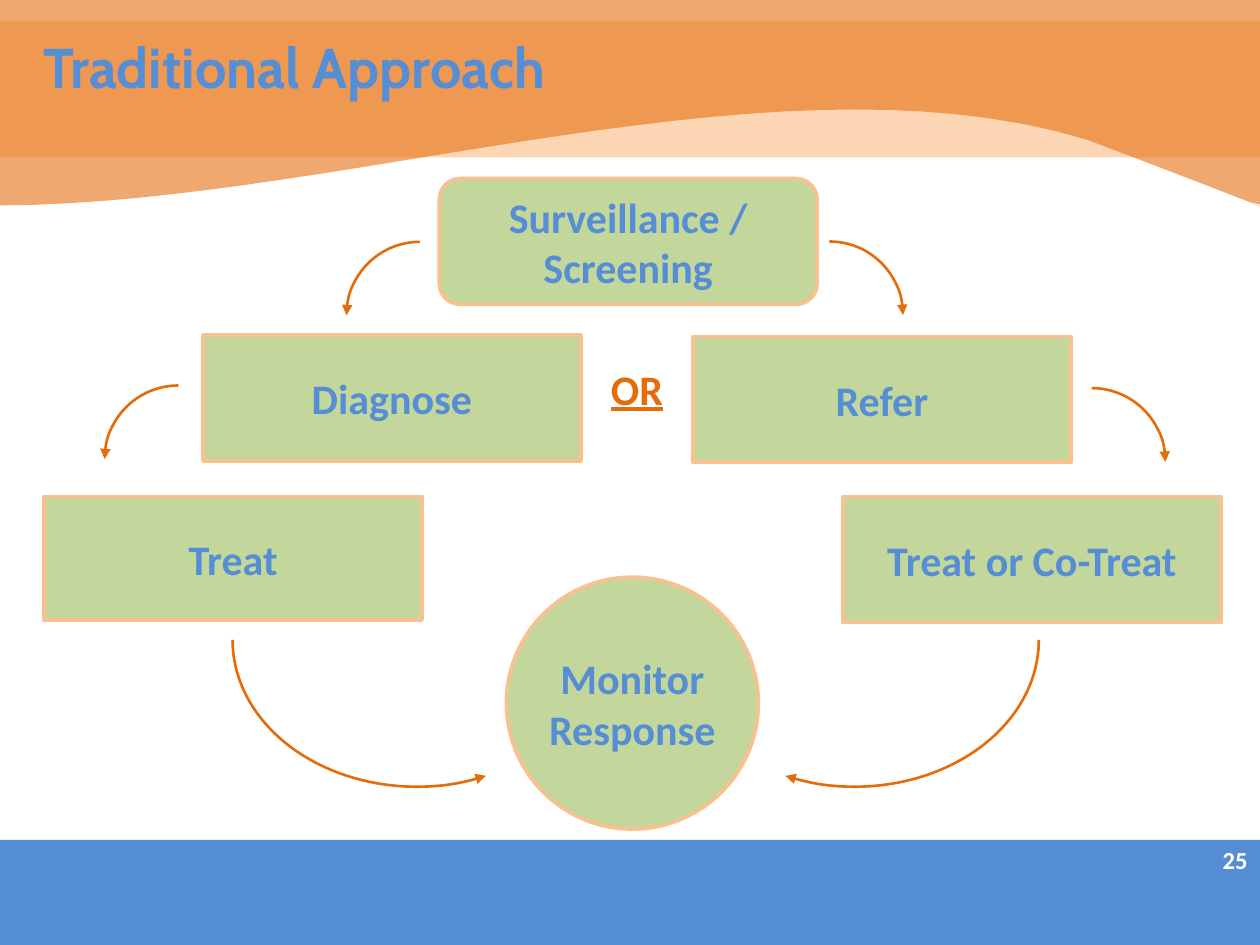
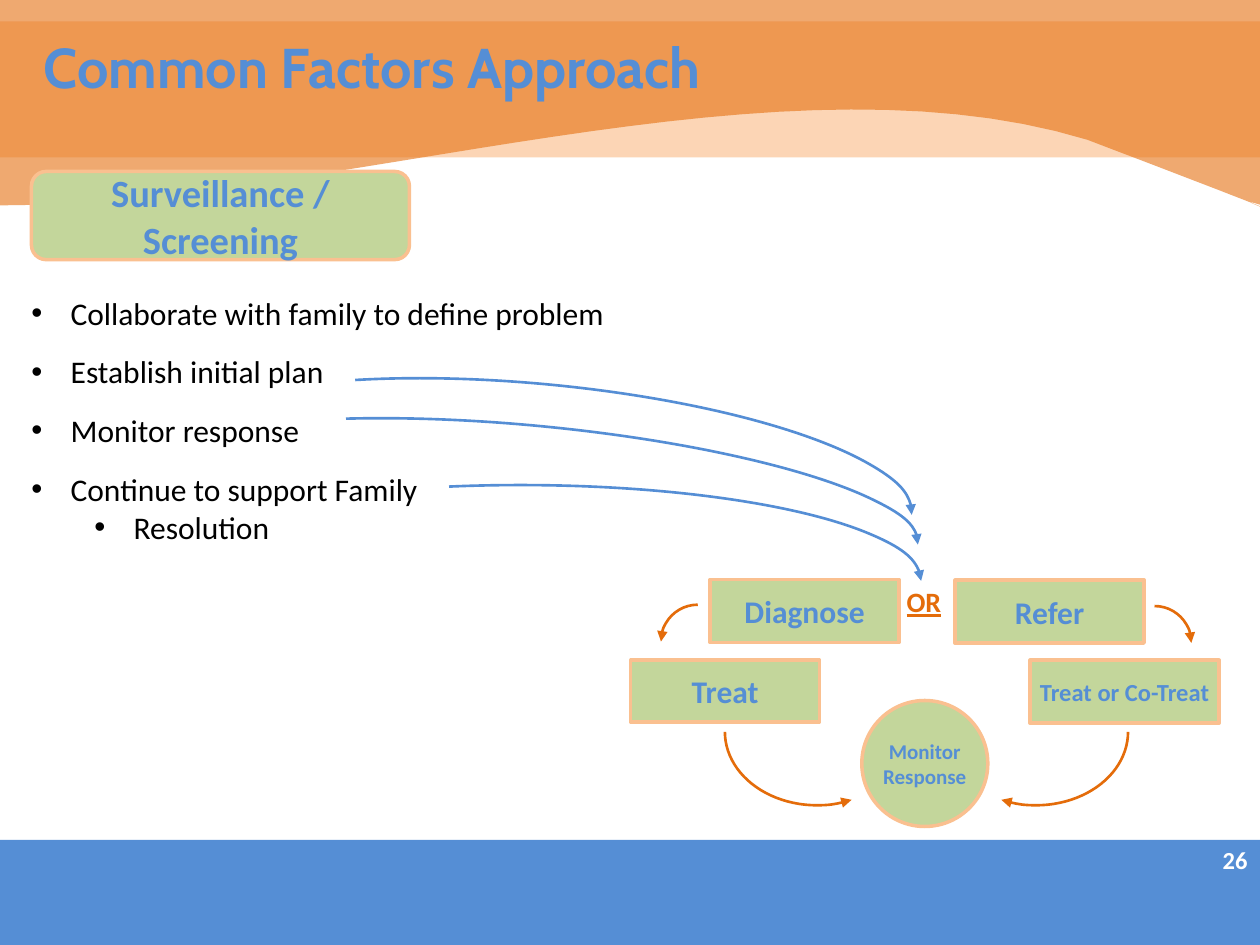
from lxml.etree import SubElement
from pptx import Presentation
from pptx.dml.color import RGBColor
from pptx.enum.shapes import MSO_SHAPE
from pptx.enum.text import MSO_ANCHOR, PP_ALIGN
from pptx.oxml.ns import qn
from pptx.util import Pt

BLUE = RGBColor(0x55, 0x8E, 0xD5)
ORANGE = RGBColor(0xE4, 0x6C, 0x0A)
PEACH = RGBColor(0xFC, 0xD5, 0xB5)
BORDER = RGBColor(0xFA, 0xC0, 0x90)
GREEN = RGBColor(0xC3, 0xD6, 0x9B)
WHITE = RGBColor(0xFF, 0xFF, 0xFF)
BLACK = RGBColor(0x00, 0x00, 0x00)

SLIDE_WIDTH, SLIDE_HEIGHT = 720, 540
WAVE_CURVES = [
    [(-2.2, 117.4), (194.4, 117.4), (442.1, 25.2), (621.4, 79.9)],
    [(621.4, 79.9), (799.2, 147.6), (686.9, 106.6), (721.4, 117.4)],
]
CURVE_STEPS = 30
SWEEP = (162, 16.24)
QUARTER = (162, 0)


def add_run(paragraph, text, size, color, bold=True, font="Calibri", underline=False):
    run = paragraph.add_run()
    run.text = text
    run.font.size = Pt(size)
    run.font.name = font
    run.font.bold = bold
    run.font.underline = underline
    run.font.color.rgb = color


def add_preset(slide, preset, place, fill=None):
    shape = slide.shapes.add_shape(preset, *map(Pt, place))
    shape.shadow.inherit = False
    if fill is None:
        shape.fill.background()
    else:
        shape.fill.solid()
        shape.fill.fore_color.rgb = fill
    return shape


def add_band(slide, place, color):
    add_preset(slide, MSO_SHAPE.RECTANGLE, place, color).line.fill.background()


def bezier_points(curve):
    for step in range(1, CURVE_STEPS + 1):
        t = step / CURVE_STEPS
        weights = ((1 - t) ** 3, 3 * t * (1 - t) ** 2, 3 * t * t * (1 - t), t ** 3)
        yield tuple(Pt(sum(w * point[axis] for w, point in zip(weights, curve)))
                    for axis in (0, 1))


def add_wave(slide):
    left, right = Pt(WAVE_CURVES[0][0][0]), Pt(WAVE_CURVES[1][-1][0])
    outline = slide.shapes.build_freeform(right, 0, scale=1.0)
    edge = [(left, 0), (left, Pt(WAVE_CURVES[0][0][1]))]
    for curve in WAVE_CURVES:
        edge.extend(bezier_points(curve))
    outline.add_line_segments(edge, close=True)
    wave = outline.convert_to_shape()
    wave.shadow.inherit = False
    wave.line.fill.background()
    wave.fill.solid()
    wave.fill.fore_color.rgb = ORANGE
    color = wave.element.spPr.find(qn("a:solidFill"))[0]
    SubElement(color, qn("a:alpha"), val="58000")


def add_text(slide, place, text, size, color, align=PP_ALIGN.LEFT,
             anchor=MSO_ANCHOR.TOP, **style):
    frame = slide.shapes.add_textbox(*map(Pt, place)).text_frame
    frame.word_wrap = True
    frame.vertical_anchor = anchor
    frame.paragraphs[0].alignment = align
    add_run(frame.paragraphs[0], text, size, color, **style)


def add_step(slide, preset, place, lines, size, side_inset=7.2):
    step = add_preset(slide, preset, place, GREEN)
    step.line.color.rgb = BORDER
    step.line.width = Pt(2)
    frame = step.text_frame
    frame.word_wrap = True
    frame.vertical_anchor = MSO_ANCHOR.MIDDLE
    frame.margin_left = frame.margin_right = Pt(side_inset)
    for index, line in enumerate(lines):
        paragraph = frame.add_paragraph() if index else frame.paragraphs[0]
        paragraph.alignment = PP_ALIGN.CENTER
        add_run(paragraph, line, size, BLUE)


def add_arc_arrow(slide, place, angles=QUARTER, color=ORANGE, rotation=0, flip=None):
    arc = add_preset(slide, MSO_SHAPE.ARC, place)
    arc.adjustments[0], arc.adjustments[1] = angles
    arc.rotation = rotation
    arc.line.color.rgb = color
    arc.line.width = Pt(1.5)
    if flip:
        arc.element.spPr.find(qn("a:xfrm")).set(flip, "1")
    SubElement(arc.element.spPr.find(qn("a:ln")), qn("a:tailEnd"), type="triangle")


def add_care_pathway(slide, origin, scale, box_size, co_treat_size, monitor_size):
    def fit(left, top, width, height):
        return (origin[0] + scale * left, origin[1] + scale * top,
                scale * width, scale * height)

    boxes = [
        ("Diagnose", (116, 191.5, 216, 72), box_size, 7.2),
        ("Refer", (396, 192.2, 216, 72), box_size, 7.2),
        ("Treat", (25.2, 283.7, 216, 70.6), box_size, 7.2),
        ("Treat or Co-Treat", (481.7, 283.7, 216, 72), co_treat_size, 0),
    ]
    for label, place, size, inset in boxes:
        add_step(slide, MSO_SHAPE.RECTANGLE, fit(*place), [label], size, inset)
    add_step(slide, MSO_SHAPE.OVAL, fit(289.4, 329.8, 144, 144),
             ["Monitor", "Response"], monitor_size, 0)
    add_arc_arrow(slide, fit(581.8, 221.8, 84.2, 84.2))
    add_arc_arrow(slide, fit(59.8, 220.3, 84.2, 84.2), flip="flipH")
    add_arc_arrow(slide, fit(404.6, 260.6, 167.8, 210.2), SWEEP, rotation=90)
    add_arc_arrow(slide, fit(154.1, 260.6, 167.8, 210.2), SWEEP, rotation=90, flip="flipV")


def add_bullets(slide, place, items):
    frame = slide.shapes.add_textbox(*map(Pt, place)).text_frame
    frame.word_wrap = True
    for index, (text, level, after) in enumerate(items):
        paragraph = frame.add_paragraph() if index else frame.paragraphs[0]
        paragraph.level = level
        paragraph.space_after = Pt(after)
        properties = paragraph._p.get_or_add_pPr()
        properties.set("marL", str(Pt(22.5 + 36 * level)))
        properties.set("indent", str(Pt(-22.5)))
        SubElement(properties, qn("a:buFont"), typeface="Arial")
        SubElement(properties, qn("a:buChar"), char="•")
        add_run(paragraph, text, 18, BLACK, bold=False)


def add_framed_slide(deck, title, number):
    slide = deck.slides.add_slide(deck.slide_layouts[6])
    add_band(slide, (-0.7, 12.2, 721.6, 77.8), PEACH)
    add_wave(slide)
    add_band(slide, (-0.7, 480, 727, 66), BLUE)
    add_text(slide, (18, 15.1, 628, 75), title, 32, BLUE, font="Cabin")
    add_text(slide, (552, 477, 168, 28.8), str(number), 14, WHITE,
             PP_ALIGN.RIGHT, MSO_ANCHOR.MIDDLE)
    return slide


def add_traditional_approach(deck):
    slide = add_framed_slide(deck, "Traditional Approach", 25)
    add_step(slide, MSO_SHAPE.ROUNDED_RECTANGLE, (251, 102, 216, 72),
             ["Surveillance / Screening"], 24)
    add_arc_arrow(slide, (432, 138, 84, 84))
    add_arc_arrow(slide, (198, 138.2, 84, 84), flip="flipH")
    add_care_pathway(slide, (0, 0), 1, 24, 24, 24)
    add_text(slide, (342, 204, 48, 36), "OR", 24, ORANGE, underline=True)


def add_common_factors_approach(deck):
    slide = add_framed_slide(deck, "Common Factors Approach", 26)
    add_step(slide, MSO_SHAPE.ROUNDED_RECTANGLE, (18, 98, 216, 50.4),
             ["Surveillance / Screening"], 22)
    add_care_pathway(slide, (347.8, 235.4), 0.5, 18, 14, 12)
    add_text(slide, (511, 330.5, 39.6, 26.6), "OR", 16, ORANGE, underline=True)
    add_bullets(slide, (10.8, 164.2, 416, 152.6), [
        ("Collaborate with family to define problem", 0, 12),
        ("Establish initial plan", 0, 12),
        ("Monitor response", 0, 12),
        ("Continue to support Family", 0, 0),
        ("Resolution", 1, 0),
    ])
    plan_arrows = [
        ((97.2, 219.6, 424.8, 108), (121.44, 0.04), 5.5),
        ((85, 243.4, 440.6, 92.2), (119.73, 0.09), 5.5),
        ((68.4, 277.2, 458, 109.4), (139.71, 0.01), 0),
    ]
    for place, angles, rotation in plan_arrows:
        add_arc_arrow(slide, place, angles, BLUE, rotation)


def main():
    deck = Presentation()
    deck.slide_width, deck.slide_height = Pt(SLIDE_WIDTH), Pt(SLIDE_HEIGHT)
    add_traditional_approach(deck)
    add_common_factors_approach(deck)
    deck.save("out.pptx")


if __name__ == "__main__":
    main()
